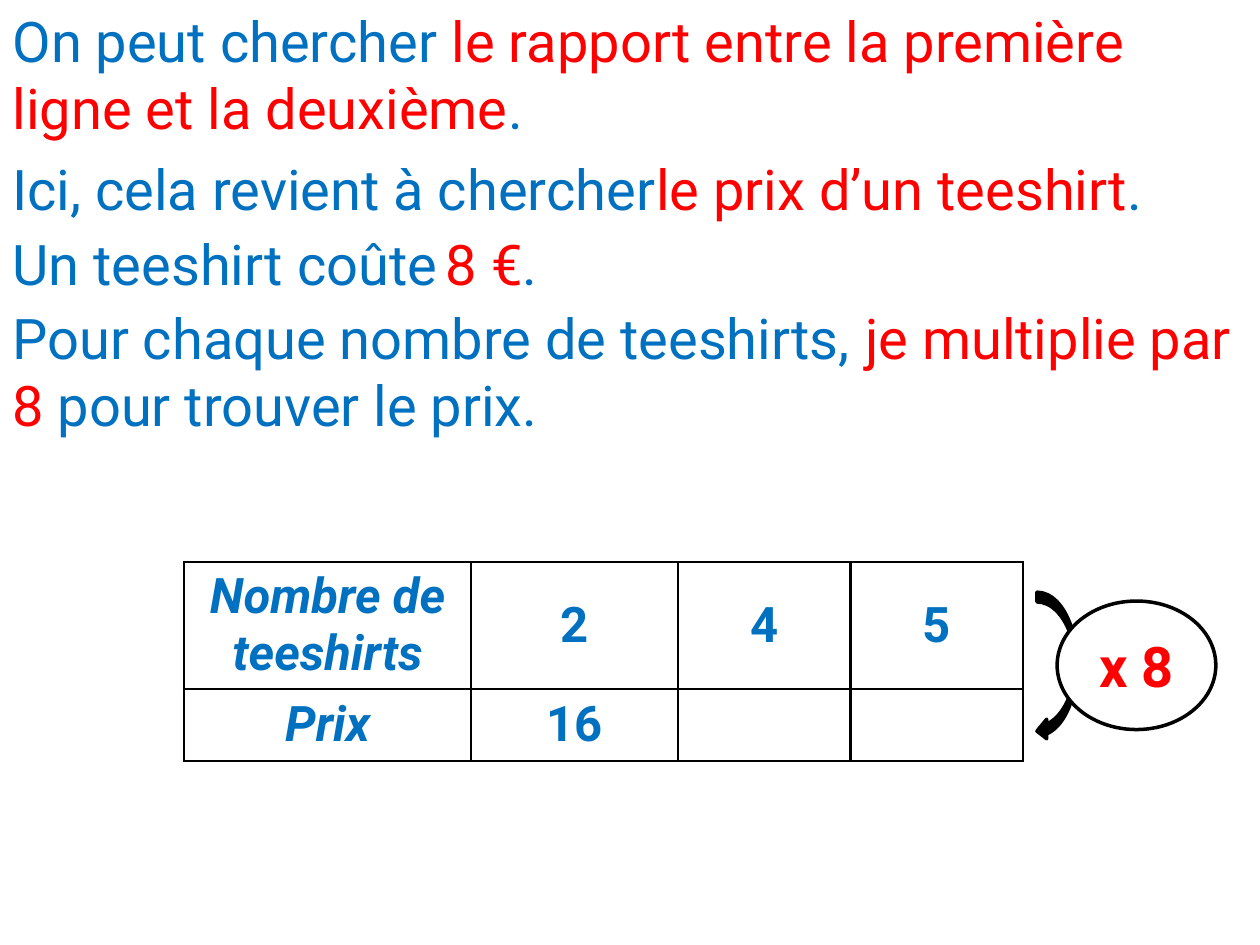
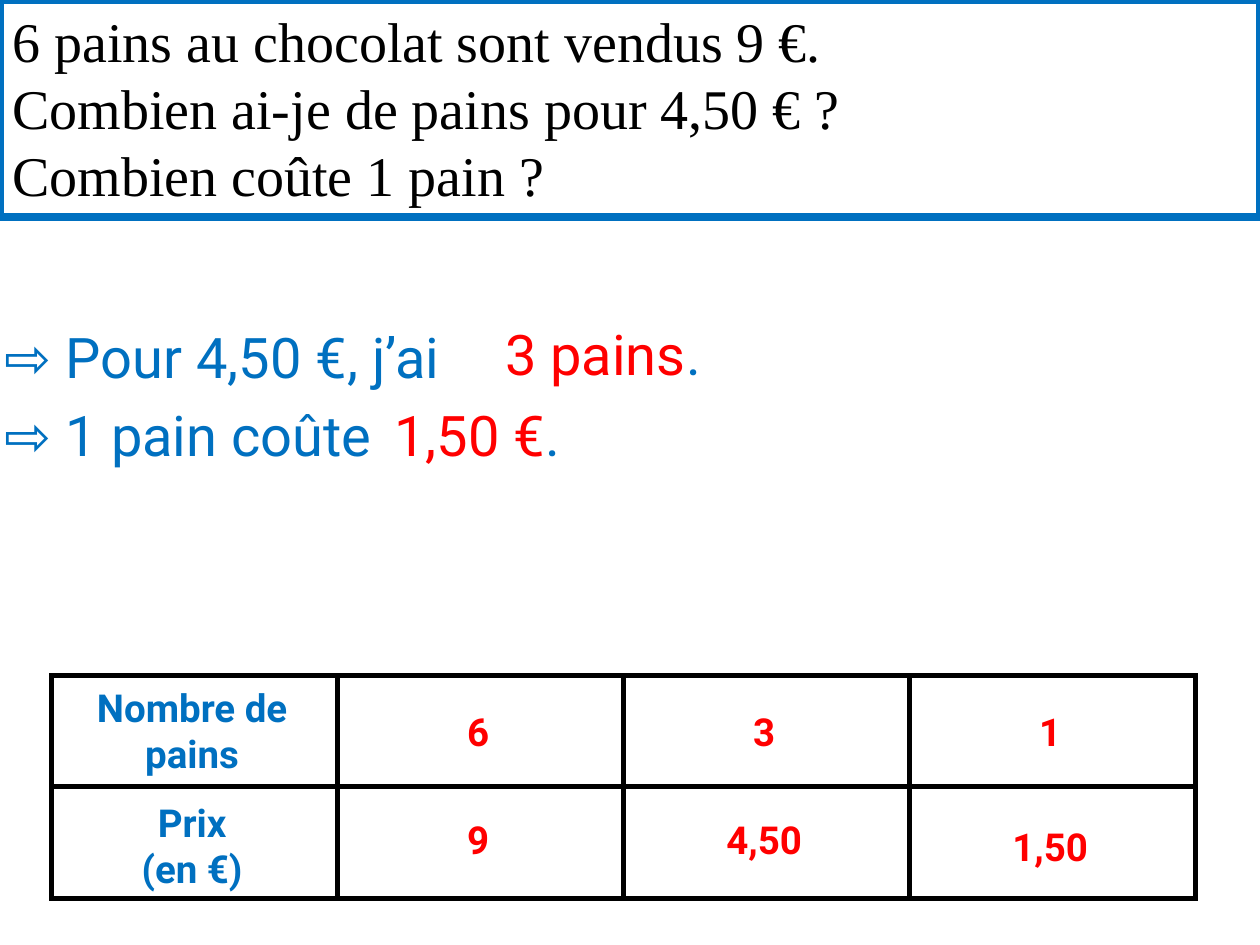
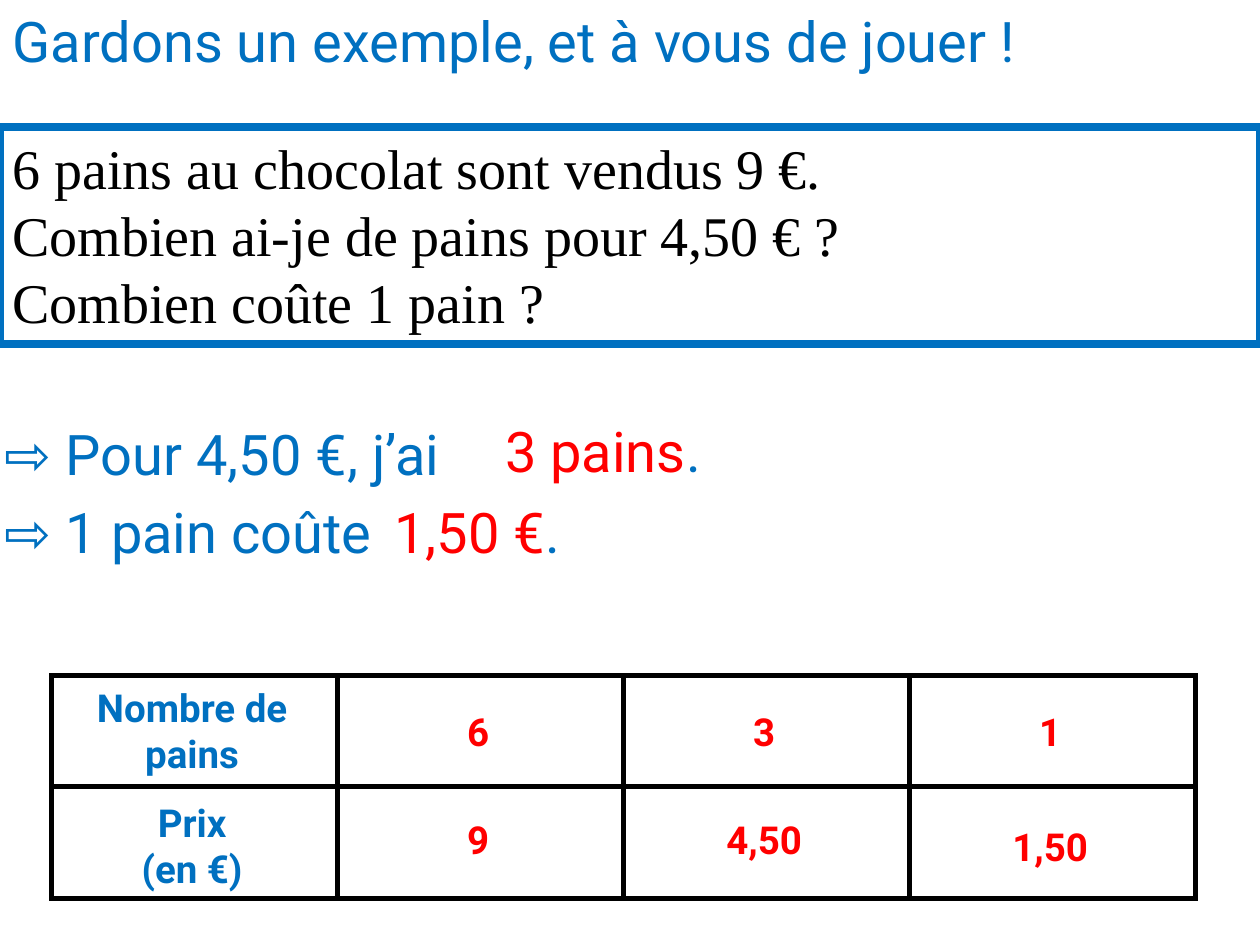
from dataclasses import dataclass

import pptx
import pptx.dml.color
import pptx.enum.shapes
import pptx.enum.text
import pptx.oxml
import pptx.oxml.ns
import pptx.util
from lxml import etree

COLUMNS, ROWS = 100, 75
SLIDE_WIDTH, SLIDE_HEIGHT = pptx.util.Inches(10), pptx.util.Inches(7.5)
TITLE_ONLY, BLANK = 5, 6


@dataclass(frozen=True)
class Theme:
    blue: str = "0070C0"
    red: str = "FF0000"
    black: str = "000000"
    white: str = "FFFFFF"
    font: str = "Roboto"
    statement_font: str = "Times New Roman"
    text: int = 32
    table: int = 28
    label: int = 22
    frame_line: float = 4.5
    shape_line: float = 2
    thin_border: float = 1.5
    thick_border: float = 3


THEME = Theme()


@dataclass(frozen=True)
class Box:
    left: float
    top: float
    width: float
    height: float

    def inner(self, left, top, width, height):
        return Box(self.left + left, self.top + top, width, height)

    def lengths(self):
        return (across(self.left), down(self.top), across(self.width), down(self.height))


def across(columns):
    return round(SLIDE_WIDTH * columns / COLUMNS)


def down(rows):
    return round(SLIDE_HEIGHT * rows / ROWS)


def color(value):
    return pptx.dml.color.RGBColor.from_string(value)


def blue(text):
    return text, THEME.blue


def red(text):
    return text, THEME.red


def write(frame, paragraphs, size=THEME.text, font=THEME.font, bold=False, italic=False,
          centered=False):
    frame.word_wrap = True
    alignment = pptx.enum.text.PP_ALIGN
    for index, runs in enumerate(paragraphs):
        paragraph = frame.add_paragraph() if index else frame.paragraphs[0]
        paragraph.alignment = alignment.CENTER if centered else alignment.LEFT
        for text, run_color in runs:
            run = paragraph.add_run()
            run.text = text
            run.font.name = font
            run.font.size = pptx.util.Pt(size)
            run.font.bold = bold
            run.font.italic = italic
            run.font.color.rgb = color(run_color)


def fit(frame):
    frame.vertical_anchor = pptx.enum.text.MSO_ANCHOR.TOP
    frame.auto_size = pptx.enum.text.MSO_AUTO_SIZE.SHAPE_TO_FIT_TEXT


def add_title(slide, box, runs):
    title = slide.shapes.title
    title.left, title.top, title.width, title.height = box.lengths()
    write(title.text_frame, [runs])
    fit(title.text_frame)


def add_text(slide, box, *paragraphs, indent=0, **style):
    frame = slide.shapes.add_textbox(*box.lengths()).text_frame
    write(frame, paragraphs, **style)
    fit(frame)
    if indent:
        properties = frame.paragraphs[0]._p.get_or_add_pPr()
        properties.set("marL", str(across(indent)))
        properties.set("indent", "0")


def add_shape(shapes, kind, box, line, width, fill=None):
    shape = shapes.add_shape(kind, *box.lengths())
    shape.shadow.inherit = False
    shape.line.color.rgb = color(line)
    shape.line.width = pptx.util.Pt(width)
    if fill:
        shape.fill.solid()
        shape.fill.fore_color.rgb = color(fill)
    else:
        shape.fill.background()
    return shape


def set_borders(cell, width):
    properties = cell._tc.get_or_add_tcPr()
    qualified = pptx.oxml.ns.qn
    for side in ("lnL", "lnR", "lnT", "lnB"):
        line = etree.SubElement(properties, qualified(f"a:{side}"), w=str(pptx.util.Pt(width)))
        fill = etree.SubElement(line, qualified("a:solidFill"))
        etree.SubElement(fill, qualified("a:srgbClr"), val=THEME.black)


def add_grid(slide, box, widths, heights, border, fill=None):
    table = slide.shapes.add_table(len(heights), len(widths), *box.lengths()).table
    table.first_row = table.horz_banding = False
    for column, width in zip(table.columns, widths):
        column.width = across(width)
    for row, height in zip(table.rows, heights):
        row.height = down(height)
    for cell in table.iter_cells():
        set_borders(cell, border)
        if fill:
            cell.fill.solid()
            cell.fill.fore_color.rgb = color(fill)
        else:
            cell.fill.background()
    return table


def add_shirt_table(slide, box):
    table = add_grid(slide, box, (22.8, 16.4, 13.7, 13.7), (10.1, 5.7), THEME.thin_border)
    values = (("Nombre de teeshirts", "2", "4", "5"), ("Prix", "16", "", ""))
    for row, texts in enumerate(values):
        for column, text in enumerate(texts):
            cell = table.cell(row, column)
            cell.margin_left = cell.margin_right = across(0.7)
            cell.margin_top = cell.margin_bottom = 0
            cell.vertical_anchor = pptx.enum.text.MSO_ANCHOR.MIDDLE
            if text:
                write(cell.text_frame, [[blue(text)]], THEME.table, bold=True,
                      italic=column == 0, centered=True)


def add_multiplier(slide, box):
    kinds = pptx.enum.shapes.MSO_SHAPE
    shapes = slide.shapes.add_group_shape().shapes
    add_shape(shapes, kinds.CURVED_LEFT_ARROW, box.inner(0, 0, 3.1, box.height),
              THEME.black, THEME.shape_line, THEME.black)
    factor = add_shape(shapes, kinds.OVAL, box.inner(1.6, 0.7, 12.6, 10.2),
                       THEME.black, THEME.shape_line, THEME.white)
    write(factor.text_frame, [[red("x 8")]], bold=True, centered=True)
    factor.text_frame.vertical_anchor = pptx.enum.text.MSO_ANCHOR.MIDDLE


def add_statement(slide, box):
    frame = add_shape(slide.shapes, pptx.enum.shapes.MSO_SHAPE.RECTANGLE, box,
                      THEME.blue, THEME.frame_line).text_frame
    lines = ("6 pains au chocolat sont vendus 9 €.", "Combien ai-je de pains pour 4,50 € ?",
             "Combien coûte 1 pain ?")
    write(frame, [[(line, THEME.black)] for line in lines], font=THEME.statement_font)
    fit(frame)


def add_answers(slide, box):
    add_text(slide, box.inner(0, 0, 53.9, 6.4), [blue("⇨ Pour 4,50 €, j’ai")])
    add_text(slide, box.inner(39.7, -0.2, 27.1, 6.4), [red("3 pains"), blue(".")])
    add_text(slide, box.inner(0, 6.2, 65.6, 6.4), [blue("⇨ 1 pain coûte")])
    add_text(slide, box.inner(30.9, 6.2, 21.6, 6.4), [red("1,50 €"), blue(".")])


def add_bread_table(slide, box):
    step = box.width / 4
    add_grid(slide, box, [step] * 4, [box.height / 2] * 2, THEME.thick_border, THEME.white)
    style = dict(size=THEME.label, bold=True, centered=True)
    headings = ((0.2, [[blue("Nombre de pains")]]), (9.3, [[blue("Prix")], [blue("(en €)")]]))
    for top, paragraphs in headings:
        add_text(slide, box.inner(0, top, 22.3, 8.4), *paragraphs, **style)
    values = (("6", 1, 2.1), ("9", 1, 10.7), ("3", 2, 2.1), ("4,50", 2, 10.7),
              ("1", 3, 2.1), ("1,50", 3, 11.2))
    for text, column, top in values:
        add_text(slide, box.inner(column * step, top, 22.3, 4.7), [red(text)], **style)


def add_ratio_slide(presentation):
    slide = presentation.slides.add_slide(presentation.slide_layouts[TITLE_ONLY])
    add_title(slide, Box(0, 0, COLUMNS, 11.8), [
        blue("On peut chercher "),
        red("le rapport entre la première ligne et la deuxième"), blue(".")])
    add_shirt_table(slide, Box(14.6, 44.6, 66.6, 15.8))
    steps = ((11.8, "Ici, cela revient à chercher", "le prix d’un teeshirt", 51.1),
             (17.7, "Un teeshirt coûte", "8 €", 34.4))
    for top, opening, answer, indent in steps:
        box = Box(0, top, COLUMNS, 6.4)
        add_text(slide, box, [blue(opening)])
        add_text(slide, box, [red(answer), blue(".")], indent=indent)
    add_text(slide, Box(0, 23.6, COLUMNS, 11.8), [
        blue("Pour chaque nombre de teeshirts, "), red("je multiplie par 8"),
        blue(" pour trouver le prix.")])
    add_multiplier(slide, Box(82.3, 47, 14.2, 11.8))


def add_bread_slide(presentation, statement_top, answers_top, title=None):
    layout = presentation.slide_layouts[TITLE_ONLY if title else BLANK]
    slide = presentation.slides.add_slide(layout)
    if title:
        add_title(slide, Box(0, 0, COLUMNS, 6.4), [blue(title)])
    add_bread_table(slide, Box(4.1, 53.6, 90.8, 17.7))
    add_statement(slide, Box(0, statement_top, COLUMNS, 17.2))
    add_answers(slide, Box(-0.6, answers_top, COLUMNS, 12.6))


def main():
    presentation = pptx.Presentation()
    presentation.slide_width = SLIDE_WIDTH
    presentation.slide_height = SLIDE_HEIGHT
    add_ratio_slide(presentation)
    add_bread_slide(presentation, 0, 25.1)
    add_bread_slide(presentation, 10.1, 32.8, "Gardons un exemple, et à vous de jouer !")
    presentation.save("out.pptx")


if __name__ == "__main__":
    main()
